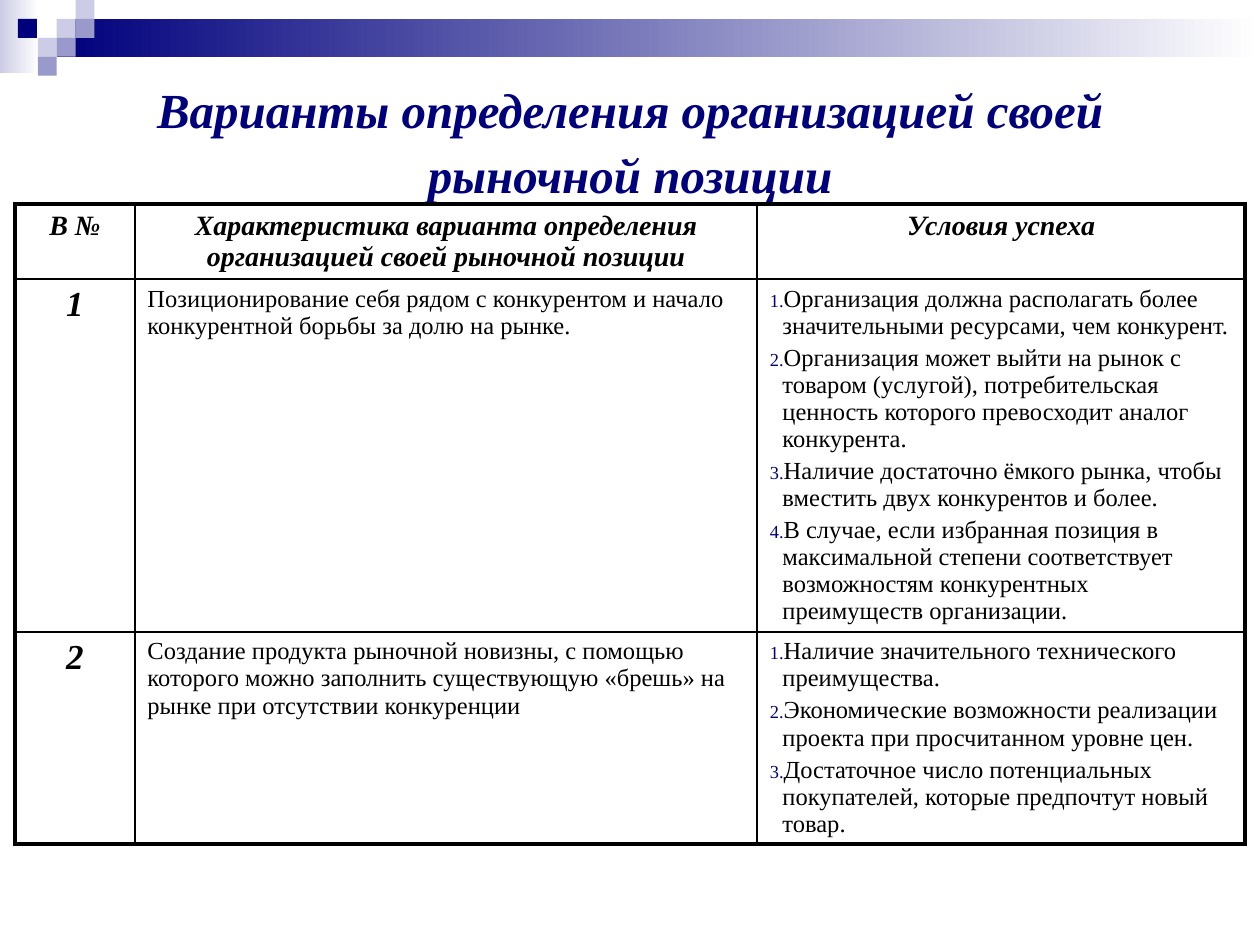
from dataclasses import dataclass

from lxml import etree
from pptx import Presentation
from pptx.dml.color import RGBColor
from pptx.enum import shapes, text
from pptx.oxml.ns import qn
from pptx.util import Inches, Pt


@dataclass(frozen=True)
class Theme:
    font: str = "Times New Roman"
    navy: str = "00007D"
    violet: str = "9999CC"
    lavender: str = "CCCCE6"
    white: str = "FFFFFF"
    black: str = "000000"
    title_size: int = 28
    header_size: int = 16
    number_size: int = 20
    body_size: int = 14
    outer_line: float = 2.25
    inner_line: float = 1


THEME = Theme()
TITLE = "Варианты определения организацией своей рыночной позиции"
HEADERS = [
    "В №",
    "Характеристика варианта определения организацией своей рыночной позиции",
    "Условия успеха",
]
VARIANTS = [
    (
        "Позиционирование себя рядом с конкурентом и начало конкурентной борьбы за долю на рынке.",
        [
            "Организация должна располагать более значительными ресурсами, чем конкурент.",
            "Организация может выйти на рынок с товаром (услугой), потребительская ценность "
            "которого превосходит аналог конкурента.",
            "Наличие достаточно ёмкого рынка, чтобы вместить двух конкурентов и более.",
            "В случае, если избранная позиция в максимальной степени соответствует "
            "возможностям конкурентных преимуществ организации.",
        ],
    ),
    (
        "Создание продукта рыночной новизны, с помощью которого можно заполнить существующую "
        "«брешь» на рынке при отсутствии конкуренции",
        [
            "Наличие значительного технического преимущества.",
            "Экономические возможности реализации проекта при просчитанном уровне цен.",
            "Достаточное число потенциальных покупателей, которые предпочтут новый товар.",
        ],
    ),
]


def add_run(paragraph, content, size, color=THEME.black, strong=False):
    run = paragraph.add_run()
    run.text = content
    font = run.font
    font.name, font.size = THEME.font, Pt(size)
    font.bold = font.italic = strong
    font.color.rgb = RGBColor.from_string(color)


def add_block(slide, left, top, width, height, *colors):
    """Add a borderless rectangle: one colour is solid, two make a gradient."""
    block = slide.shapes.add_shape(
        shapes.MSO_SHAPE.RECTANGLE,
        Inches(left), Inches(top), Inches(width), Inches(height))
    block.shadow.inherit = False
    block.line.fill.background()
    if len(colors) == 1:
        block.fill.solid()
        block.fill.fore_color.rgb = RGBColor.from_string(colors[0])
        return
    block.fill.gradient()
    block.fill.gradient_angle = 0
    for stop, color in zip(block.fill.gradient_stops, colors):
        stop.color.rgb = RGBColor.from_string(color)


def add_banner(slide, left, top, width):
    unit = 0.15
    add_block(slide, left, top, 0.31, 0.58, THEME.lavender, THEME.white)
    add_block(slide, left + 3 * unit, top + unit, width - 3 * unit, 2 * unit,
              THEME.navy, THEME.white)
    squares = [
        (3, 1, THEME.lavender), (4, 0, THEME.lavender), (4, 1, THEME.violet),
        (2, 2, THEME.lavender), (0.95, 1, THEME.navy), (3, 2, THEME.violet),
        (2, 3, THEME.violet),
    ]
    for column, row, color in squares:
        add_block(slide, left + column * unit, top + row * unit, unit, unit, color)


def place_title(slide, left, top, width, height):
    title = slide.shapes.title
    title.left, title.top = Inches(left), Inches(top)
    title.width, title.height = Inches(width), Inches(height)
    frame = title.text_frame
    frame.word_wrap = True
    frame.auto_size = text.MSO_AUTO_SIZE.NONE
    frame.vertical_anchor = text.MSO_ANCHOR.MIDDLE
    paragraph = frame.paragraphs[0]
    paragraph.alignment = text.PP_ALIGN.CENTER
    paragraph.line_spacing = 1.1
    add_run(paragraph, TITLE, THEME.title_size, THEME.navy, strong=True)


def number_paragraph(paragraph):
    properties = paragraph._p.get_or_add_pPr()
    properties.set("marL", str(Inches(0.1)))
    properties.set("indent", str(-Inches(0.1)))
    color = etree.SubElement(properties, qn("a:buClr"))
    etree.SubElement(color, qn("a:srgbClr"), val=THEME.navy)
    etree.SubElement(properties, qn("a:buSzPct"), val="75000")
    etree.SubElement(properties, qn("a:buFont"), typeface=THEME.font)
    etree.SubElement(properties, qn("a:buAutoNum"), type="arabicPeriod")


def set_borders(cell, **widths):
    properties = cell._tc.get_or_add_tcPr()
    for side, width in widths.items():
        line = etree.SubElement(properties, qn(f"a:ln{side}"), w=str(Pt(width)))
        fill = etree.SubElement(line, qn("a:solidFill"))
        etree.SubElement(fill, qn("a:srgbClr"), val=THEME.black)


def fill_cell(cell, lines, size, strong=False, numbered=False):
    """Write the lines as paragraphs; strong ones are centred bold italic."""
    frame = cell.text_frame
    for index, line in enumerate(lines):
        paragraph = frame.add_paragraph() if index else frame.paragraphs[0]
        paragraph.alignment = text.PP_ALIGN.CENTER if strong else text.PP_ALIGN.LEFT
        paragraph.space_before = Pt(0.2 * size)
        if numbered:
            number_paragraph(paragraph)
        add_run(paragraph, line, size, strong=strong)


def add_variants_table(slide, left, top, column_widths, row_heights):
    rows, columns = len(row_heights), len(column_widths)
    table = slide.shapes.add_table(
        rows, columns, Inches(left), Inches(top),
        Inches(sum(column_widths)), Inches(sum(row_heights))).table
    table.first_row = table.horz_banding = False
    for column, width in zip(table.columns, column_widths):
        column.width = Inches(width)
    for row, height in zip(table.rows, row_heights):
        row.height = Inches(height)

    for column, header in enumerate(HEADERS):
        fill_cell(table.cell(0, column), [header], THEME.header_size, strong=True)
    for row, (description, conditions) in enumerate(VARIANTS, start=1):
        fill_cell(table.cell(row, 0), [str(row)], THEME.number_size, strong=True)
        fill_cell(table.cell(row, 1), [description], THEME.body_size)
        fill_cell(table.cell(row, 2), conditions, THEME.body_size, numbered=True)

    def line_width(is_outer):
        return THEME.outer_line if is_outer else THEME.inner_line

    for row in range(rows):
        for column in range(columns):
            cell = table.cell(row, column)
            set_borders(cell, L=line_width(column == 0),
                        R=line_width(column == columns - 1),
                        T=line_width(row == 0), B=line_width(row == rows - 1))
            cell.fill.background()


def main():
    presentation = Presentation()
    presentation.slide_width, presentation.slide_height = Inches(10), Inches(7.5)
    slide = presentation.slides.add_slide(presentation.slide_layouts[5])
    add_banner(slide, 0, 0, 10)
    place_title(slide, 0.5, 0.5, 9, 1.2)
    add_variants_table(slide, 0.12, 1.62, [0.95, 4.94, 3.87], [0.59, 2.8, 1.68])
    presentation.save("out.pptx")


if __name__ == "__main__":
    main()
